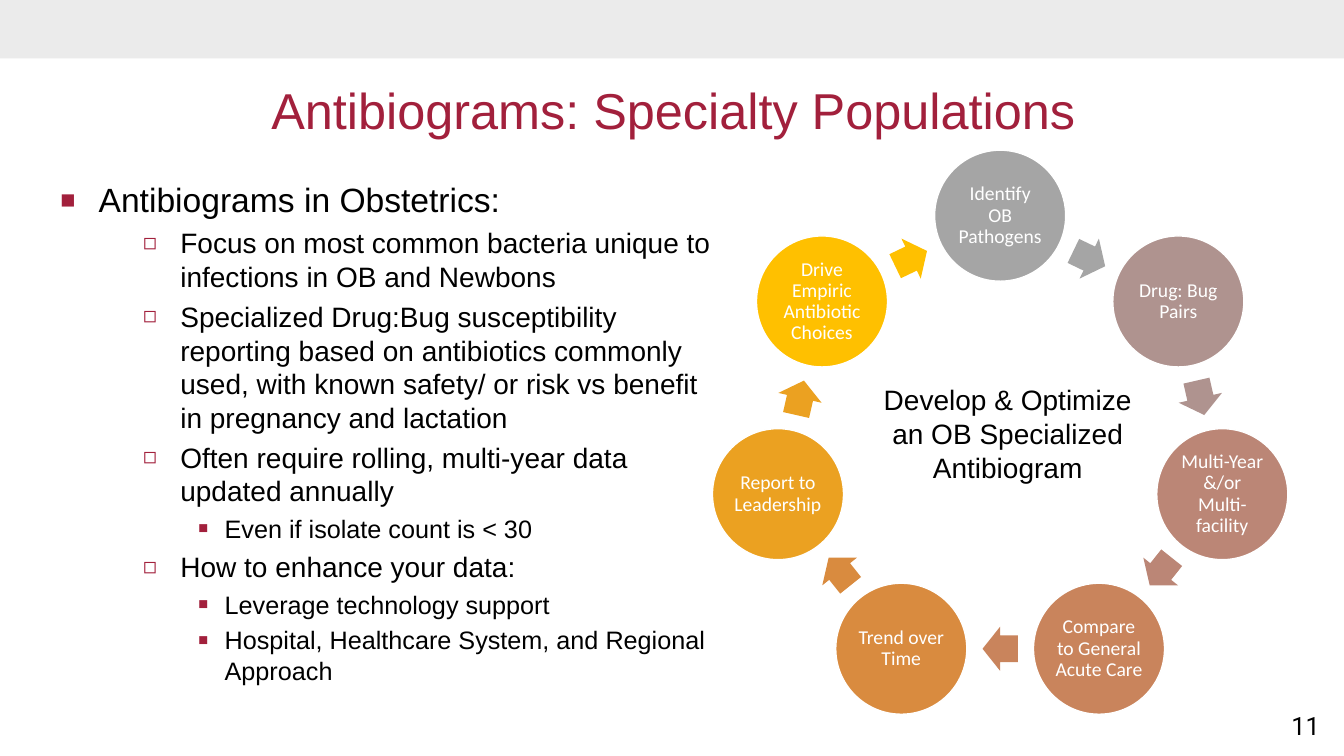
from math import cos, pi, sin

from lxml.etree import SubElement
from pptx import Presentation
from pptx.dml.color import RGBColor
from pptx.enum.shapes import MSO_SHAPE as Preset
from pptx.enum.text import MSO_ANCHOR as Anchor, PP_ALIGN as Align
from pptx.oxml.ns import qn
from pptx.util import Inches, Pt

CRIMSON, BLACK, WHITE = "A2203C", "000000", "FFFFFF"

RING_X, RING_Y, RING_RADIUS = 9.92, 4.4, 2.26
CIRCLE_SIZE, ARROW_LENGTH, ARROW_WIDTH = 1.3, 0.35, 0.44

STEPS = [
    ("Identify OB Pathogens", "A5A5A5"),
    ("Drug: Bug Pairs", "AF938F"),
    ("Multi-Year &/or Multi-facility", "BB8676"),
    ("Compare to General Acute Care", "C9845C"),
    ("Trend over Time", "D98B3F"),
    ("Report to Leadership", "EBA121"),
    ("Drive Empiric Antibiotic Choices", "FFC000"),
]

LEVELS = [
    {"size": 24, "indent": 0.38, "hang": 0.38, "before": 0, "bullet": "■", "scale": 75},
    {"size": 20, "indent": 1.19, "hang": 0.37, "before": 4.5, "bullet": "◻", "scale": 80},
    {"size": 18, "indent": 1.63, "hang": 0.26, "before": 4, "bullet": "■", "scale": 65},
]

OUTLINE = [
    (0, "Antibiograms in Obstetrics:"),
    (1, "Focus on most common bacteria unique to infections in OB and Newbons"),
    (1, "Specialized Drug:Bug susceptibility reporting based on antibiotics "
        "commonly used, with known safety/ or risk vs benefit in pregnancy and lactation"),
    (1, "Often require rolling, multi-year data updated annually"),
    (2, "Even if isolate count is < 30"),
    (1, "How to enhance your data:"),
    (2, "Leverage technology support"),
    (2, "Hospital, Healthcare System, and Regional Approach"),
]


def rgb(code):
    """Turn a hex string into a colour."""
    return RGBColor.from_string(code)


def apply_format(target, values):
    """Set each named attribute of the target."""
    for name, value in values.items():
        setattr(target, name, value)


def write(paragraph, words, size, color=BLACK, font="Arial", **layout):
    """Put formatted words into a paragraph."""
    apply_format(paragraph, layout)
    run = paragraph.add_run()
    run.text = words
    apply_format(run.font, {"size": Pt(size), "name": font})
    run.font.color.rgb = rgb(color)


def add_frame(slide, left, top, width, height, anchor=Anchor.TOP):
    """Add a wrapping text box and return its text frame."""
    box = slide.shapes.add_textbox(*map(Inches, (left, top, width, height)))
    apply_format(box.text_frame, {"word_wrap": True, "vertical_anchor": anchor})
    return box.text_frame


def add_solid(slide, preset, center, size, color):
    """Add a flat filled shape around a center point."""
    (x, y), (width, height) = center, size
    solid = slide.shapes.add_shape(
        preset, *map(Inches, (x - width / 2, y - height / 2, width, height)))
    solid.shadow.inherit = False
    solid.fill.solid()
    solid.fill.fore_color.rgb = rgb(color)
    solid.line.fill.background()
    return solid


def add_bullet(paragraph, level):
    """Give a paragraph the indent and bullet of its level."""
    properties = paragraph._p.get_or_add_pPr()
    properties.set("marL", str(Inches(level["indent"])))
    properties.set("indent", str(-Inches(level["hang"])))
    bullet_color = SubElement(properties, qn("a:buClr"))
    SubElement(bullet_color, qn("a:srgbClr"), val=CRIMSON)
    SubElement(properties, qn("a:buSzPct"), val=str(level["scale"] * 1000))
    SubElement(properties, qn("a:buFont"), typeface="Arial")
    SubElement(properties, qn("a:buChar"), char=level["bullet"])


def add_outline(slide):
    """Add the bulleted outline on the left."""
    frame = add_frame(slide, 0.5, 1.73, 6.78, 5.36)
    for index, (depth, words) in enumerate(OUTLINE):
        paragraph = frame.add_paragraph() if index else frame.paragraphs[0]
        level = LEVELS[depth]
        add_bullet(paragraph, level)
        write(paragraph, words, level["size"], level=depth, space_before=Pt(level["before"]))


def add_step(slide, center, words, color):
    """Add one labelled circle of the cycle."""
    circle = add_solid(slide, Preset.OVAL, center, (CIRCLE_SIZE, CIRCLE_SIZE), color)
    circle.line.color.rgb = rgb(WHITE)
    circle.line.width = Pt(1)
    sides = ("left", "right", "top", "bottom")
    apply_format(circle.text_frame, {f"margin_{side}": Inches(0.02) for side in sides})
    apply_format(circle.text_frame, {"word_wrap": True, "vertical_anchor": Anchor.MIDDLE})
    write(circle.text_frame.paragraphs[0], words, 14, WHITE, "Calibri",
          alignment=Align.CENTER, line_spacing=0.9)


def add_arrow(slide, center, rotation, color):
    """Add one arrow pointing to the next step."""
    arrow = add_solid(slide, Preset.RIGHT_ARROW, center, (ARROW_LENGTH, ARROW_WIDTH), color)
    arrow.adjustments[0] = 0.6
    arrow.adjustments[1] = 0.5
    arrow.rotation = rotation


def add_cycle(slide):
    """Add the ring of steps with an arrow halfway between neighbours."""
    turn = 2 * pi / len(STEPS)
    centers = [(RING_X + RING_RADIUS * sin(i * turn), RING_Y - RING_RADIUS * cos(i * turn))
               for i in range(len(STEPS))]
    for index, (words, color) in enumerate(STEPS):
        here, following = centers[index], centers[(index + 1) % len(STEPS)]
        midpoint = [(a + b) / 2 for a, b in zip(here, following)]
        add_step(slide, here, words, color)
        add_arrow(slide, midpoint, (index + 0.5) * 360 / len(STEPS), color)


def main():
    """Build the slide and save it."""
    deck = Presentation()
    apply_format(deck, {"slide_width": Inches(13.33), "slide_height": Inches(7.5)})
    slide = deck.slides.add_slide(deck.slide_layouts[6])

    add_solid(slide, Preset.RECTANGLE, (6.67, 0.29), (13.34, 0.58), "EBEBEB")
    page_number = add_frame(slide, 12.71, 7, 0.6, 0.4)
    write(page_number.paragraphs[0], "11", 18, font="Roboto")
    add_cycle(slide)
    title = add_frame(slide, 0.93, 0.56, 11.5, 1.06, Anchor.MIDDLE)
    write(title.paragraphs[0], "Antibiograms: Specialty Populations", 36, CRIMSON,
          alignment=Align.CENTER)
    add_outline(slide)
    goal = add_frame(slide, 8.61, 3.75, 2.77, 1.11)
    write(goal.paragraphs[0], "Develop & Optimize an OB Specialized Antibiogram", 20,
          alignment=Align.CENTER)

    deck.save("out.pptx")


if __name__ == "__main__":
    main()
